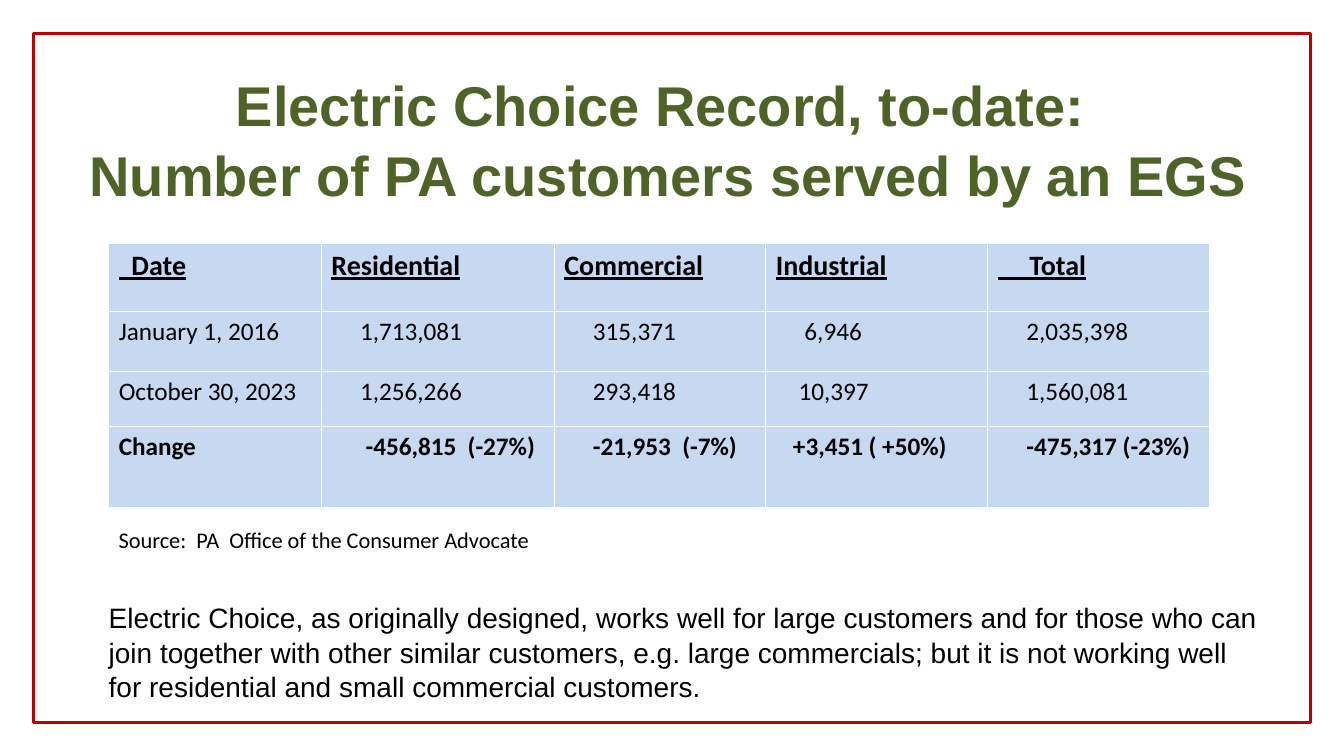
from dataclasses import dataclass

from lxml.etree import SubElement
from pptx import Presentation
from pptx.dml.color import RGBColor
from pptx.enum.shapes import MSO_SHAPE as Preset
from pptx.enum.text import MSO_ANCHOR as Anchor, PP_ALIGN as Align
from pptx.oxml.ns import qn
from pptx.util import Cm, Pt

COLORS = {
    "frame": "C00000",
    "title": "4F6228",
    "text": "000000",
    "cell": "C6D9F1",
    "rule": "FFFFFF",
}


@dataclass(frozen=True)
class TextBlock:
    lines: tuple[str, ...]
    left: float
    top: float
    width: float
    height: float
    size: int
    font: str = "Arial"
    color: str = "text"
    bold: bool = False
    align: Align = Align.LEFT
    anchor: Anchor = Anchor.MIDDLE
    inset: tuple[float, float] = (0, 0)
    spacing: float = 1.04


@dataclass(frozen=True)
class Row:
    height: float
    texts: tuple[str, ...]
    indents: tuple[float, ...] = (0, 0, 0, 0, 0)
    size: int = 18
    bold: bool = False
    underline: bool = False


BLOCKS = (
    TextBlock(
        ("Electric Choice Record, to-date: ", "Number of PA customers served by an EGS"),
        1.27, 1.75, 31.12, 3.43, 40, color="title", bold=True, align=Align.CENTER,
    ),
    TextBlock(
        ("Electric Choice, as originally designed, works well for large customers "
         "and for those who can join together with other similar customers, e.g. "
         "large commercials; but it is not working well for residential and small "
         "commercial customers.",),
        2.74, 15.04, 29.21, 2.74, 20,
    ),
    TextBlock(
        ("Source:  PA  Office of the Consumer Advocate",),
        2.74, 13.13, 19.69, 0.94, 16, font="Calibri", anchor=Anchor.TOP,
        inset=(0.25, 0.13), spacing=1,
    ),
)

TABLE_LEFT, TABLE_TOP = 2.74, 6.14
COLUMN_WIDTHS = (5.36, 5.87, 5.33, 5.59, 5.59)
ROWS = (
    Row(1.7, ("  Date", "Residential", "Commercial", "Industrial", "     Total"),
        size=20, bold=True, underline=True),
    Row(1.52, ("January 1, 2016", "1,713,081", "315,371", "6,946", "2,035,398"),
        (0, 0.72, 0.72, 0.72, 0.72)),
    Row(1.38, ("October 30, 2023", "1,256,266", "293,418", "10,397", "1,560,081"),
        (0, 0.72, 0.72, 0.57, 0.72)),
    Row(2.04, ("Change", "-456,815  (-27%)", "-21,953  (-7%)", "+3,451 ( +50%)",
               "-475,317 (-23%)"),
        (0, 0.86, 0.72, 0.43, 0.72), bold=True),
)


def rgb(name: str) -> RGBColor:
    return RGBColor.from_string(COLORS[name])


def add_span(para, text: str, size: int, font: str, color: str,
             bold: bool, underline: bool = False) -> None:
    span = para.add_run()
    span.text = text
    span.font.size = Pt(size)
    span.font.name = font
    span.font.color.rgb = rgb(color)
    span.font.bold = bold
    span.font.underline = underline


def add_text_block(page, block: TextBlock) -> None:
    box = page.shapes.add_textbox(
        Cm(block.left), Cm(block.top), Cm(block.width), Cm(block.height))
    frame = box.text_frame
    frame.word_wrap = True
    frame.vertical_anchor = block.anchor
    frame.margin_left = frame.margin_right = Cm(block.inset[0])
    frame.margin_top = frame.margin_bottom = Cm(block.inset[1])
    para = frame.paragraphs[0]
    para.alignment = block.align
    para.line_spacing = block.spacing
    for index, line in enumerate(block.lines):
        if index:
            para.add_line_break()
        add_span(para, line, block.size, block.font, block.color, block.bold)


def set_cell_look(cell) -> None:
    """Give the cell thin borders on all sides and its solid fill."""
    properties = cell._tc.get_or_add_tcPr()
    for side in ("lnL", "lnR", "lnT", "lnB"):
        border = SubElement(properties, qn(f"a:{side}"), w=str(Pt(1)))
        fill = SubElement(border, qn("a:solidFill"))
        SubElement(fill, qn("a:srgbClr"), val=COLORS["rule"])
    cell.fill.solid()
    cell.fill.fore_color.rgb = rgb("cell")


def add_customer_table(page) -> None:
    table = page.shapes.add_table(
        len(ROWS), len(COLUMN_WIDTHS), Cm(TABLE_LEFT), Cm(TABLE_TOP),
        Cm(sum(COLUMN_WIDTHS)), Cm(sum(row.height for row in ROWS))).table
    for column, width in zip(table.columns, COLUMN_WIDTHS):
        column.width = Cm(width)
    for row_index, row in enumerate(ROWS):
        table.rows[row_index].height = Cm(row.height)
        for column_index, (text, indent) in enumerate(zip(row.texts, row.indents)):
            cell = table.cell(row_index, column_index)
            set_cell_look(cell)
            para = cell.text_frame.paragraphs[0]
            if indent:
                para._p.get_or_add_pPr().set("marL", str(Cm(indent)))
            add_span(para, text, row.size, "Calibri", "text", row.bold, row.underline)


def add_page_frame(page) -> None:
    border = page.shapes.add_shape(
        Preset.RECTANGLE, Cm(0.85), Cm(0.85), Cm(32.17), Cm(17.36))
    border.shadow.inherit = False
    border.fill.background()
    border.line.color.rgb = rgb("frame")
    border.line.width = Pt(2.25)


def main() -> None:
    deck = Presentation()
    deck.slide_width, deck.slide_height = Cm(33.87), Cm(19.05)
    page = deck.slides.add_slide(deck.slide_layouts[6])
    for block in BLOCKS:
        add_text_block(page, block)
    add_customer_table(page)
    add_page_frame(page)
    deck.save("out.pptx")


if __name__ == "__main__":
    main()
